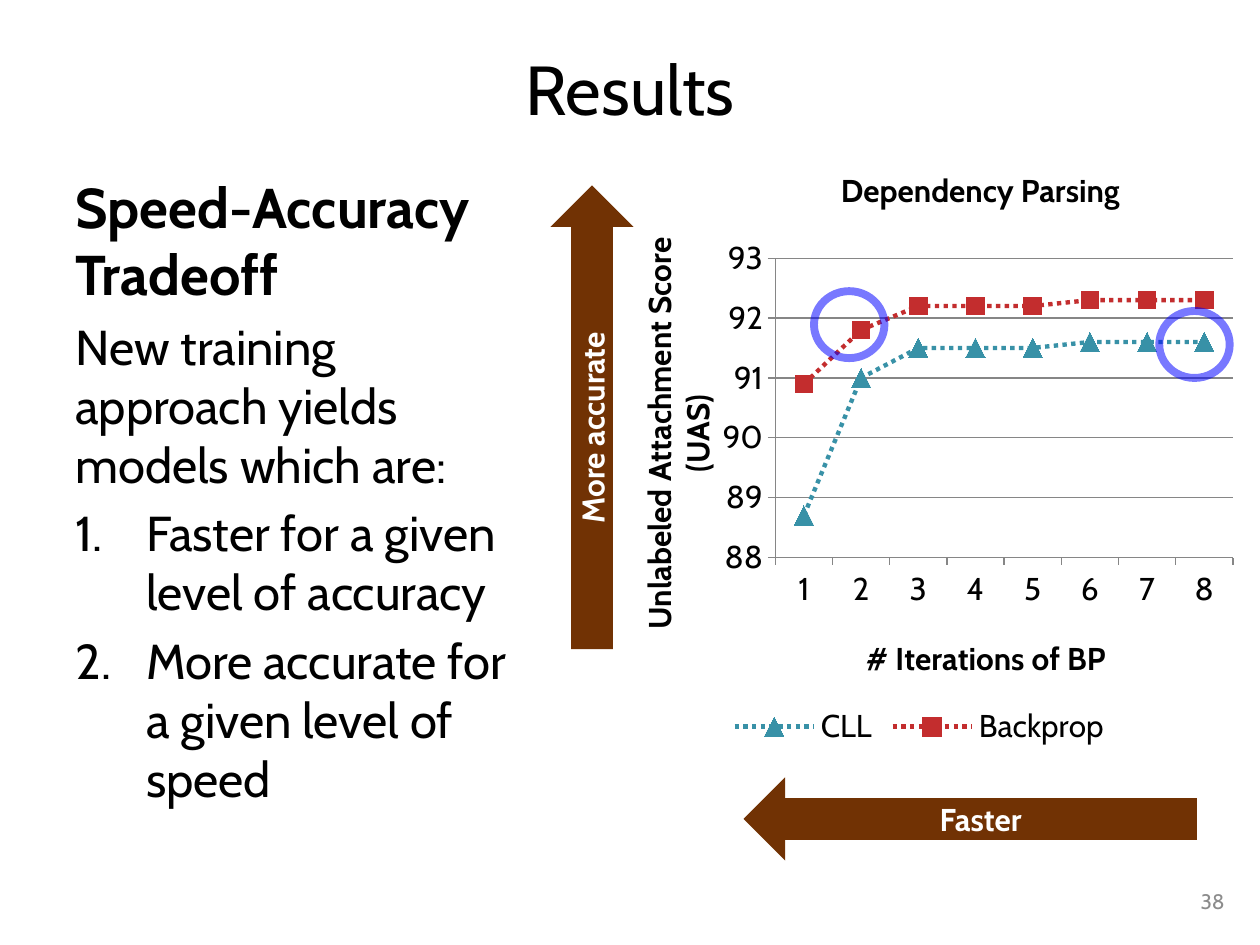
from lxml import etree
from pptx import Presentation
from pptx.chart.data import CategoryChartData
from pptx.dml.color import RGBColor
from pptx.enum.chart import XL_CHART_TYPE, XL_LEGEND_POSITION, XL_MARKER_STYLE, XL_TICK_MARK
from pptx.enum.dml import MSO_LINE
from pptx.enum.shapes import MSO_SHAPE
from pptx.enum.text import MSO_ANCHOR, PP_ALIGN
from pptx.oxml.ns import qn
from pptx.util import Cm, Pt

LEFT, CENTER, RIGHT = PP_ALIGN.LEFT, PP_ALIGN.CENTER, PP_ALIGN.RIGHT
TOP, MIDDLE = MSO_ANCHOR.TOP, MSO_ANCHOR.MIDDLE

FONT = "Cabin"
COLORS = {
    "text": "000000", "number": "8C8C8C", "arrow": "713204", "on_arrow": "FFFFFF",
    "ring": "0000FF", "grid": "868686", "cll": "3891A7", "backprop": "C32D2E",
}

TITLE = "Results"
BODY = [
    dict(text="Speed-Accuracy Tradeoff", size=32, bold=True),
    dict(text="New training approach yields models which are:", size=28),
    dict(text="Faster for a given level of accuracy", size=28, numbered=True),
    dict(text="More accurate for a given level of speed", size=28, numbered=True),
]
CHART_HEADING = "Dependency Parsing"
X_TITLE = "# Iterations of BP"
Y_TITLE = "Unlabeled Attachment Score (UAS)"
ITERATIONS = [str(number) for number in range(1, 9)]
SERIES = [
    ("CLL", [88.7, 91, 91.5, 91.5, 91.5, 91.6, 91.6, 91.6],
     "cll", XL_MARKER_STYLE.TRIANGLE, 11),
    ("Backprop", [90.9, 91.8, 92.2, 92.2, 92.2, 92.3, 92.3, 92.3],
     "backprop", XL_MARKER_STYLE.SQUARE, 10),
]
# label, preset, rotation, (left, top, width, height) in cm
ARROWS = [
    ("Faster", MSO_SHAPE.LEFT_ARROW, 0, (14.99, 15.67, 9.14, 1.68)),
    ("More accurate", MSO_SHAPE.RIGHT_ARROW, 270, (7.26, 7.57, 9.35, 1.68)),
]
RINGS = [(16.41, 5.87, 1.42, 1.35), (23.37, 6.27, 1.42, 1.35)]


def color(name):
    return RGBColor.from_string(COLORS[name])


def lengths(place):
    return [Cm(value) for value in place]


def format_font(font, size, name="text", bold=False):
    font.name, font.size, font.bold = FONT, Pt(size), bold
    font.color.rgb = color(name)


def write(para, text, size=18, name="text", bold=False, align=LEFT, numbered=False):
    para.alignment = align
    if numbered:
        settings = para._p.get_or_add_pPr()
        settings.set("marL", str(Cm(1.43)))
        settings.set("indent", str(-Cm(1.43)))
        etree.SubElement(settings, qn("a:buFont"), typeface="+mj-lt")
        etree.SubElement(settings, qn("a:buAutoNum"), type="arabicPeriod")
    span = para.add_run()
    span.text = text
    format_font(span.font, size, name, bold)


def add_text(page, place, paragraphs, anchor=TOP):
    box = page.shapes.add_textbox(*lengths(place))
    frame = box.text_frame
    frame.word_wrap = True
    frame.vertical_anchor = anchor
    for index, content in enumerate(paragraphs):
        para = frame.add_paragraph() if index else frame.paragraphs[0]
        write(para, **content)
        if index:
            para.space_before = Pt(content["size"] * 0.2)


def set_layout(parent, position, inner=False, **fractions):
    """Place a chart part by fractions of the chart's width and height."""
    layout = parent.find(qn("c:layout"))
    if layout is None:
        layout = etree.Element(qn("c:layout"))
        parent.insert(position, layout)
    manual = etree.SubElement(layout, qn("c:manualLayout"))
    if inner:
        etree.SubElement(manual, qn("c:layoutTarget"), val="inner")
    for axis in "xy":
        etree.SubElement(manual, qn(f"c:{axis}Mode"), val="edge")
    for key, value in fractions.items():
        etree.SubElement(manual, qn(f"c:{key}"), val=str(value))


def format_axis(axis, title, **place):
    axis.major_tick_mark = XL_TICK_MARK.OUTSIDE
    axis.minor_tick_mark = XL_TICK_MARK.NONE
    axis.format.line.color.rgb = color("grid")
    format_font(axis.tick_labels.font, 18)
    frame = axis.axis_title.text_frame
    write(frame.paragraphs[0], title, bold=True, align=CENTER)
    set_layout(axis.axis_title._element, 1, **place)
    return frame


def add_line_chart(page):
    data = CategoryChartData()
    data.categories = ITERATIONS
    for name, values, *_ in SERIES:
        data.add_series(name, values)
    chart = page.shapes.add_chart(
        XL_CHART_TYPE.LINE_MARKERS, *lengths((11.94, 4.57, 13.18, 10.59)), data).chart
    chart.has_title = False
    format_font(chart.font, 18)
    chart.has_legend = True
    chart.legend.position = XL_LEGEND_POSITION.BOTTOM
    chart.legend.include_in_layout = False
    format_font(chart.legend.font, 18)

    format_axis(chart.category_axis, X_TITLE, x=0.41, y=0.77)
    score = chart.value_axis
    score.minimum_scale, score.maximum_scale, score.major_unit = 88, 93, 1
    score.tick_labels.number_format = "0"
    score.tick_labels.number_format_is_linked = False
    score.major_gridlines.format.line.color.rgb = color("grid")
    body = format_axis(score, Y_TITLE, x=0.06, y=0.01)._txBody.bodyPr
    body.set("rot", "-5400000")
    body.set("vert", "horz")

    plot = chart.plots[0]
    plot.vary_by_categories = False
    for series, (_, _, name, marker, size) in zip(plot.series, SERIES):
        series.smooth = False
        line = series.format.line
        line.color.rgb = color(name)
        line.width = Pt(2.5)
        line.dash_style = MSO_LINE.ROUND_DOT
        series.marker.style, series.marker.size = marker, size
        series.marker.format.fill.solid()
        series.marker.format.fill.fore_color.rgb = color(name)
        series.marker.format.line.fill.background()
    set_layout(chart._chartSpace.chart.plotArea, 0, inner=True, x=0.28, y=0.06, w=0.7, h=0.57)


def add_arrow(page, label, preset, rotation, place):
    arrow = page.shapes.add_shape(preset, *lengths(place))
    arrow.shadow.inherit = False
    arrow.rotation = rotation
    arrow.fill.solid()
    arrow.fill.fore_color.rgb = color("arrow")
    arrow.line.fill.background()
    arrow.text_frame.vertical_anchor = MIDDLE
    write(arrow.text_frame.paragraphs[0], label, name="on_arrow", bold=True, align=CENTER)


def add_ring(page, place):
    ring = page.shapes.add_shape(MSO_SHAPE.OVAL, *lengths(place))
    ring.shadow.inherit = False
    ring.fill.background()
    ring.line.color.rgb = color("ring")
    ring.line.width = Pt(4.5)
    shade = ring.line._ln.find(".//" + qn("a:srgbClr"))
    etree.SubElement(shade, qn("a:alpha"), val="53000")


def main():
    deck = Presentation()
    deck.slide_width, deck.slide_height = Cm(25.4), Cm(19.05)
    page = deck.slides.add_slide(deck.slide_layouts[5])

    title = page.shapes.title
    title.left, title.top, title.width, title.height = lengths((1.27, 0.76, 22.86, 2.01))
    title.text_frame.vertical_anchor = MIDDLE
    write(title.text_frame.paragraphs[0], TITLE, size=39.6, align=CENTER)

    add_text(page, (1.27, 3.35, 9.83, 14.02), BODY)
    add_text(page, (22.53, 17.65, 2.41, 1.02),
             [dict(text="38", size=12, name="number", align=RIGHT)], anchor=MIDDLE)
    add_line_chart(page)
    for arrow in ARROWS:
        add_arrow(page, *arrow)
    add_text(page, (14.99, 3.35, 9.55, 0.97),
             [dict(text=CHART_HEADING, bold=True, align=CENTER)], anchor=MIDDLE)
    for place in RINGS:
        add_ring(page, place)
    deck.save("out.pptx")


if __name__ == "__main__":
    main()
